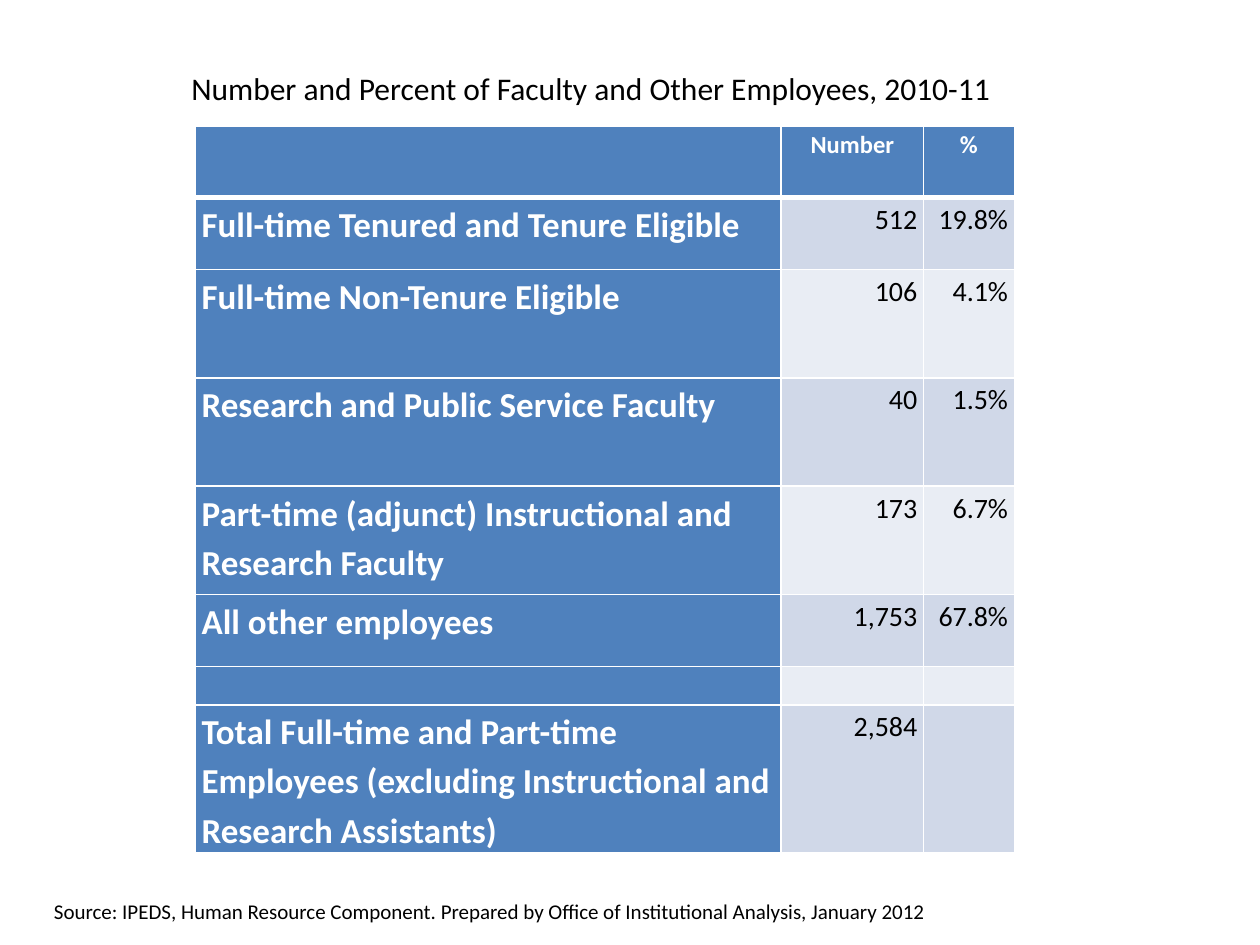
from dataclasses import dataclass

from lxml.etree import SubElement
from pptx import Presentation
from pptx.dml.color import RGBColor
from pptx.enum.text import PP_ALIGN
from pptx.oxml.ns import qn
from pptx.slide import Slide
from pptx.table import _Cell
from pptx.text.text import TextFrame
from pptx.util import Inches, Pt


@dataclass(frozen=True)
class Theme:
    font: str = "Calibri"
    accent: str = "4F81BD"
    bands: tuple[str, str] = ("D0D8E8", "E9EDF4")
    white: str = "FFFFFF"
    black: str = "000000"
    title_size: int = 18
    header_size: int = 14
    label_size: int = 20
    value_size: int = 16
    source_size: int = 12
    border: float = 1
    header_border: float = 3
    line_spacing: float = 1.15


@dataclass(frozen=True)
class EmployeeRow:
    label: str
    number: str
    percent: str
    height: float


@dataclass(frozen=True)
class Caption:
    text: str
    left: float
    top: float
    width: float
    height: float
    size: int


THEME = Theme()
COLUMN_WIDTHS = (4.65, 1.13, 0.72)
ROWS = (
    EmployeeRow("", "Number", "%", 0.57),
    EmployeeRow("Full-time Tenured and Tenure Eligible", "512", "19.8%", 0.57),
    EmployeeRow("Full-time Non-Tenure Eligible", "106", "4.1%", 0.86),
    EmployeeRow("Research and Public Service Faculty", "40", "1.5%", 0.86),
    EmployeeRow("Part-time (adjunct) Instructional and Research Faculty", "173", "6.7%", 0.86),
    EmployeeRow("All other employees", "1,753", "67.8%", 0.57),
    EmployeeRow("", "", "", 0.3),
    EmployeeRow(
        "Total Full-time and Part-time Employees (excluding Instructional and Research Assistants)",
        "2,584", "", 0.89,
    ),
)
CAPTIONS = (
    Caption("Number and Percent of Faculty and Other Employees, 2010-11",
            1.42, 0.5, 6.62, 0.4, THEME.title_size),
    Caption("Source: IPEDS, Human Resource Component. "
            "Prepared by Office of Institutional Analysis, January 2012",
            0.33, 7.08, 7.2, 0.3, THEME.source_size),
)


def write_text(frame: TextFrame, text: str, *, size: int, color: str = THEME.black,
               bold: bool = False, align: PP_ALIGN = PP_ALIGN.LEFT,
               line_spacing: float = 1.0) -> None:
    paragraph = frame.paragraphs[0]
    paragraph.alignment = align
    paragraph.line_spacing = line_spacing
    run = paragraph.add_run()
    run.text = text
    run.font.name = THEME.font
    run.font.size = Pt(size)
    run.font.bold = bold
    run.font.color.rgb = RGBColor.from_string(color)


def set_borders(cell: _Cell, *, top: float, bottom: float) -> None:
    properties = cell._tc.get_or_add_tcPr()
    widths = {"L": THEME.border, "R": THEME.border, "T": top, "B": bottom}
    for side, width in widths.items():
        line = SubElement(properties, qn(f"a:ln{side}"), w=str(Pt(width)))
        fill = SubElement(line, qn("a:solidFill"))
        SubElement(fill, qn("a:srgbClr"), val=THEME.white)


def format_cell(cell: _Cell, text: str, row: int, column: int) -> None:
    is_header, is_label = row == 0, column == 0
    set_borders(
        cell,
        top=THEME.header_border if row == 1 else THEME.border,
        bottom=THEME.header_border if is_header else THEME.border,
    )
    on_accent = is_header or is_label
    cell.fill.solid()
    cell.fill.fore_color.rgb = RGBColor.from_string(
        THEME.accent if on_accent else THEME.bands[(row - 1) % 2])
    cell.margin_left = cell.margin_right = Inches(0.05)
    cell.margin_top = cell.margin_bottom = 0
    if not text:
        return
    if is_header:
        size, align = THEME.header_size, PP_ALIGN.CENTER
    elif is_label:
        size, align = THEME.label_size, PP_ALIGN.LEFT
    else:
        size, align = THEME.value_size, PP_ALIGN.RIGHT
    write_text(cell.text_frame, text, size=size, align=align, bold=on_accent,
               color=THEME.white if on_accent else THEME.black,
               line_spacing=THEME.line_spacing)


def add_employee_table(slide: Slide, rows: tuple[EmployeeRow, ...]) -> None:
    table = slide.shapes.add_table(
        len(rows), len(COLUMN_WIDTHS), Inches(1.55), Inches(1),
        Inches(sum(COLUMN_WIDTHS)), Inches(sum(row.height for row in rows)),
    ).table
    table.first_row = True
    table.first_col = True
    table.horz_banding = False
    for column, width in zip(table.columns, COLUMN_WIDTHS):
        column.width = Inches(width)
    for row_index, row in enumerate(rows):
        table.rows[row_index].height = Inches(row.height)
        for column_index, text in enumerate((row.label, row.number, row.percent)):
            format_cell(table.cell(row_index, column_index), text, row_index, column_index)


def add_caption(slide: Slide, caption: Caption) -> None:
    shape = slide.shapes.add_textbox(Inches(caption.left), Inches(caption.top),
                                     Inches(caption.width), Inches(caption.height))
    shape.text_frame.word_wrap = False
    write_text(shape.text_frame, caption.text, size=caption.size)


def main() -> None:
    presentation = Presentation()
    presentation.slide_width = Inches(10)
    presentation.slide_height = Inches(7.5)
    slide = presentation.slides.add_slide(presentation.slide_layouts[6])
    add_employee_table(slide, ROWS)
    for caption in CAPTIONS:
        add_caption(slide, caption)
    presentation.save("out.pptx")


if __name__ == "__main__":
    main()
